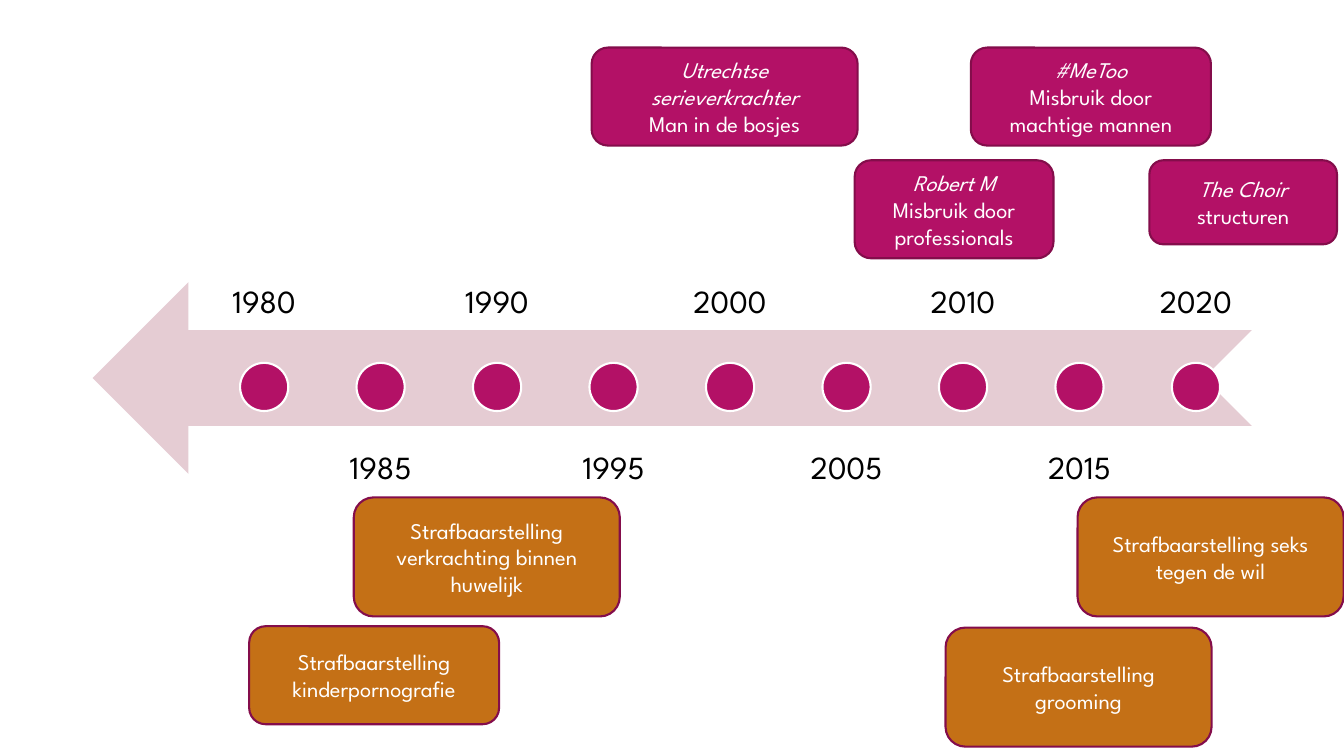
from dataclasses import dataclass

from pptx import Presentation
from pptx import util as u
from pptx.dml import color
from pptx.enum import shapes, text


@dataclass(frozen=True)
class Theme:
    """Colours, font and type sizes of the slide."""
    font: str = "League Spartan"
    year: int = 23
    note: int = 16
    line: float = 1.5
    black: str = "000000"
    white: str = "FFFFFF"
    band: str = "E5CCD3"
    pink: str = "B31166"
    edge: str = "840D4B"
    ochre: str = "C47016"


THEME = Theme()
KIND = shapes.MSO_SHAPE

CASES = [
    ((610.5, 114.5, 142, 70), "Robert M", "Misbruik door professionals"),
    ((693.5, 34, 171.5, 70), "#MeToo", "Misbruik door machtige mannen"),
    ((422.6, 34, 190, 70), "Utrechtse serieverkrachter", "Man in de bosjes"),
    ((821, 114.5, 134, 60), "The Choir", "structuren"),
]
LAWS = [
    ((178, 447.3, 178.5, 70), "Strafbaarstelling kinderpornografie"),
    ((252.7, 355.3, 190, 85), "Strafbaarstelling verkrachting binnen huwelijk"),
    ((769.7, 355.3, 190, 85), "Strafbaarstelling seks tegen de wil"),
    ((675.4, 448.3, 190, 85), "Strafbaarstelling grooming"),
]


def rgb(code):
    """Return the colour for a hex code."""
    return color.RGBColor.from_string(code)


def draw(slide, kind, box, fill, edge=None):
    """Add a flat shape with an optional outline."""
    shape = slide.shapes.add_shape(kind, *map(u.Pt, box))
    shape.shadow.inherit = False
    shape.fill.solid()
    shape.fill.fore_color.rgb = rgb(fill)
    if edge:
        shape.line.color.rgb = rgb(edge)
        shape.line.width = u.Pt(THEME.line)
    else:
        shape.line.fill.background()
    return shape


def write(para, words, size, ink, slant=False):
    """Put centred words in a paragraph."""
    para.text = words
    para.alignment = text.PP_ALIGN.CENTER
    para.font.name = THEME.font
    para.font.size = u.Pt(size)
    para.font.color.rgb = rgb(ink)
    para.font.italic = slant


def label(slide, box, year, anchor):
    """Add a year label held to one edge of its box."""
    frame = slide.shapes.add_textbox(*map(u.Pt, box)).text_frame
    frame.word_wrap = True
    frame.vertical_anchor = anchor
    frame.margin_left = frame.margin_right = u.Pt(12.8)
    frame.margin_top = frame.margin_bottom = u.Pt(12.8)
    para = frame.paragraphs[0]
    write(para, str(year), THEME.year, THEME.black)
    para.line_spacing = 0.9


def axis(slide, box):
    """Draw the arrow with a dot and a year every five years."""
    left, top, width, high = box
    band = draw(slide, KIND.NOTCHED_RIGHT_ARROW, box, THEME.band)
    band.rotation = 180
    step, dot, wide = 83.2, 34.4, 79.2
    for i, year in enumerate(range(1980, 2021, 5)):
        mid = left + 122.5 + i * step
        spot = (mid - dot / 2, top + 57.6, dot, dot)
        draw(slide, KIND.OVAL, spot, THEME.pink, THEME.white)
        if i % 2:
            shift, anchor = 108.7, text.MSO_ANCHOR.TOP
        else:
            shift, anchor = -97.2, text.MSO_ANCHOR.BOTTOM
        label(slide, (mid - wide / 2, top + shift, wide, high), year, anchor)


def card(slide, box, fill, words, head=None):
    """Add a rounded note with an optional slanted heading."""
    frame = draw(slide, KIND.ROUNDED_RECTANGLE, box, fill, THEME.edge).text_frame
    frame.word_wrap = True
    frame.vertical_anchor = text.MSO_ANCHOR.MIDDLE
    para = frame.paragraphs[0]
    if head:
        write(para, head, THEME.note, THEME.white, True)
        para = frame.add_paragraph()
    write(para, words, THEME.note, THEME.white)


def main():
    """Build and save the timeline slide."""
    deck = Presentation()
    deck.slide_width, deck.slide_height = u.Pt(960), u.Pt(540)
    slide = deck.slides.add_slide(deck.slide_layouts[6])
    axis(slide, (66.2, 201.6, 828, 136.8))
    for box, head, words in CASES:
        card(slide, box, THEME.pink, words, head)
    for box, words in LAWS:
        card(slide, box, THEME.ochre, words)
    deck.save("out.pptx")


if __name__ == "__main__":
    main()
